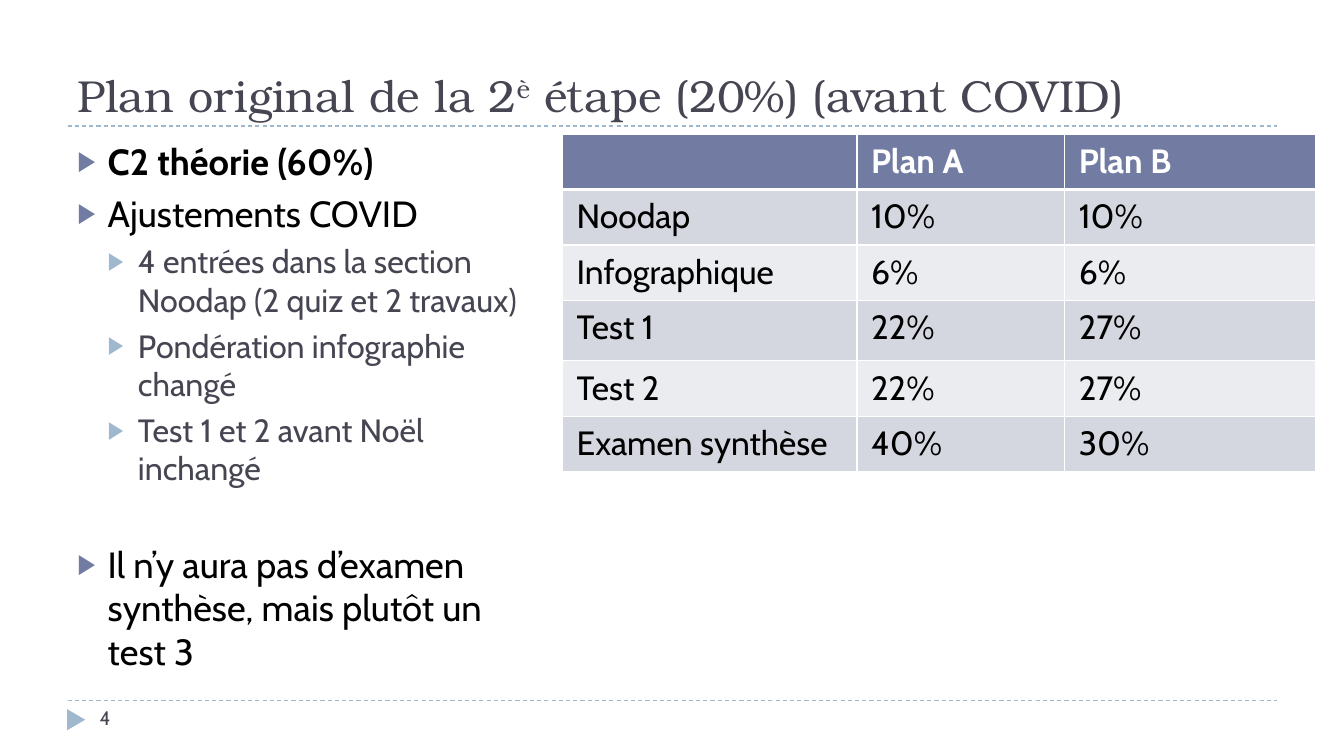
from lxml import etree
from pptx import Presentation
from pptx.dml.color import RGBColor
from pptx.enum.dml import MSO_LINE
from pptx.enum.shapes import MSO_CONNECTOR, MSO_SHAPE
from pptx.enum.text import MSO_ANCHOR
from pptx.oxml.ns import qn
from pptx.util import Inches, Pt

STRAIGHT, TRIANGLE = MSO_CONNECTOR.STRAIGHT, MSO_SHAPE.ISOSCELES_TRIANGLE
DASH, TOP, BOTTOM = MSO_LINE.DASH, MSO_ANCHOR.TOP, MSO_ANCHOR.BOTTOM

COLORS = {"slate": "464653", "indigo": "727CA3", "sky": "9FB8CD", "black": "000000",
          "white": "FFFFFF", "band_dark": "D5D7E0", "band_light": "EBECF0"}
TITLE_FONT, BODY_FONT = "TeX Gyre Bonum", "Cabin"

TITLE = [("Plan original de la 2", False), ("è", True),
         (" étape (20%) (avant COVID)", False)]
PAGE_NUMBER = "4"
# text, level, bold, space before in points
BULLETS = [
    ("C2 théorie (60%)", 0, True, 6),
    ("Ajustements COVID", 0, False, 6),
    ("4 entrées dans la section Noodap (2 quiz et 2 travaux)", 1, False, 5),
    ("Pondération infographie changé", 1, False, 5),
    ("Test 1 et 2 avant Noël inchangé", 1, False, 5),
    ("Il n’y aura pas d’examen synthèse, mais plutôt un test 3", 0, False, 39),
]
# text size, text colour, bullet colour for each level
LEVELS = [(26, "black", "indigo"), (23, "slate", "sky")]
GRADES = [
    ("", "Plan A", "Plan B"),
    ("Noodap", "10%", "10%"),
    ("Infographique", "6%", "6%"),
    ("Test 1", "22%", "27%"),
    ("Test 2", "22%", "27%"),
    ("Examen synthèse", "40%", "30%"),
]
COL_WIDTHS = [2.92, 2.06, 2.49]
ROW_HEIGHTS = [0.55, 0.55, 0.55, 0.6, 0.55, 0.55]
RULE_HEIGHTS = [6.95, 1.25]


def rgb(name):
    return RGBColor.from_string(COLORS[name])


def style(r, font, size, color, bold=False):
    r.font.name, r.font.size, r.font.bold = font, Pt(size), bold
    r.font.color.rgb = rgb(color)


def add_text_frame(s, left, top, width, height, anchor=TOP):
    tf = s.shapes.add_textbox(*map(Inches, (left, top, width, height))).text_frame
    tf.word_wrap = True
    tf.vertical_anchor = anchor
    return tf


def add_rule(s, y):
    line = s.shapes.add_connector(STRAIGHT, Inches(0.67), Inches(y), Inches(12.67), Inches(y))
    line.line.color.rgb = rgb("sky")
    line.line.width = Pt(0.75)
    line.line.dash_style = DASH
    etree.SubElement(line._element.spPr, qn("a:effectLst"))


def set_bullet(p, level, color):
    pPr = p._p.get_or_add_pPr()
    pPr.set("marL", str(Inches(0.3 * (level + 1))))
    pPr.set("indent", str(Inches(-0.3)))
    clr = etree.SubElement(pPr, qn("a:buClr"))
    etree.SubElement(clr, qn("a:srgbClr"), val=COLORS[color])
    etree.SubElement(pPr, qn("a:buSzPct"), val="76000")
    etree.SubElement(pPr, qn("a:buFont"), typeface=BODY_FONT)
    etree.SubElement(pPr, qn("a:buChar"), char="▶")


def set_borders(cell, widths):
    """Draw white borders; widths maps a side (L, R, T, B) to points."""
    tcPr = cell._tc.get_or_add_tcPr()
    for i, (side, width) in enumerate(widths.items()):
        ln = etree.Element(qn("a:ln" + side), w=str(Pt(width)))
        fill = etree.SubElement(ln, qn("a:solidFill"))
        etree.SubElement(fill, qn("a:srgbClr"), val=COLORS["white"])
        tcPr.insert(i, ln)


def add_grades(s):
    table = s.shapes.add_table(
        len(GRADES), len(COL_WIDTHS), Inches(5.58), Inches(1.33),
        Inches(sum(COL_WIDTHS)), Inches(sum(ROW_HEIGHTS))).table
    for col, width in zip(table.columns, COL_WIDTHS):
        col.width = Inches(width)
    for i, (values, height) in enumerate(zip(GRADES, ROW_HEIGHTS)):
        table.rows[i].height = Inches(height)
        header = i == 0
        band = "indigo" if header else "band_dark" if i % 2 else "band_light"
        for j, value in enumerate(values):
            cell = table.cell(i, j)
            cell.margin_left = cell.margin_right = Inches(0.14)
            cell.margin_top = cell.margin_bottom = Inches(0.07)
            cell.fill.solid()
            cell.fill.fore_color.rgb = rgb(band)
            set_borders(cell, {"L": 1, "R": 1, "T": 3 if i == 1 else 1,
                               "B": 3 if header else 1})
            if value:
                cell.text_frame.text = value
                style(cell.text_frame.paragraphs[0].runs[0], BODY_FONT, 24,
                      "white" if header else "black", header)


def main():
    prs = Presentation()
    prs.slide_width, prs.slide_height = Inches(13.33), Inches(7.5)
    s = prs.slides.add_slide(prs.slide_layouts[6])

    for y in RULE_HEIGHTS:
        add_rule(s, y)
    marker = s.shapes.add_shape(TRIANGLE, *map(Inches, (0.65, 7.05, 0.21, 0.18)))
    marker.rotation = 90
    marker.shadow.inherit = False
    marker.fill.solid()
    marker.fill.fore_color.rgb = rgb("sky")
    marker.line.fill.background()

    p = add_text_frame(s, 0.67, 0.17, 12, 1.08, BOTTOM).paragraphs[0]
    for text, raised in TITLE:
        r = p.add_run()
        r.text = text
        style(r, TITLE_FONT, 32, "slate")
        if raised:
            r.font._element.set("baseline", "30000")

    tf = add_text_frame(s, 0.89, 6.95, 2.89, 0.4)
    tf.text = PAGE_NUMBER
    style(tf.paragraphs[0].runs[0], BODY_FONT, 14, "slate")

    tf = add_text_frame(s, 0.67, 1.33, 4.75, 5.4)
    for i, (text, level, bold, gap) in enumerate(BULLETS):
        p = tf.add_paragraph() if i else tf.paragraphs[0]
        p.text, p.level, p.space_before = text, level, Pt(gap)
        size, color, bullet_color = LEVELS[level]
        set_bullet(p, level, bullet_color)
        style(p.runs[0], BODY_FONT, size, color, bold)

    add_grades(s)
    prs.save("out.pptx")


if __name__ == "__main__":
    main()
